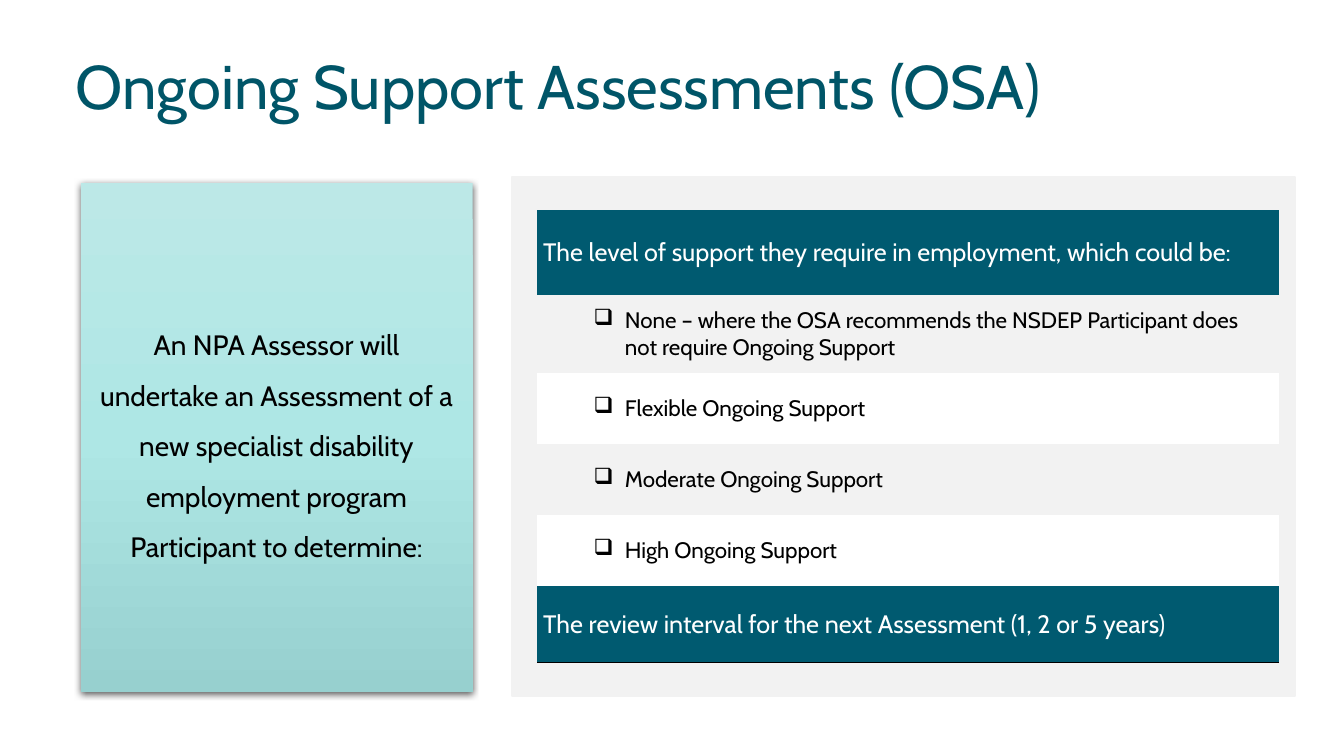
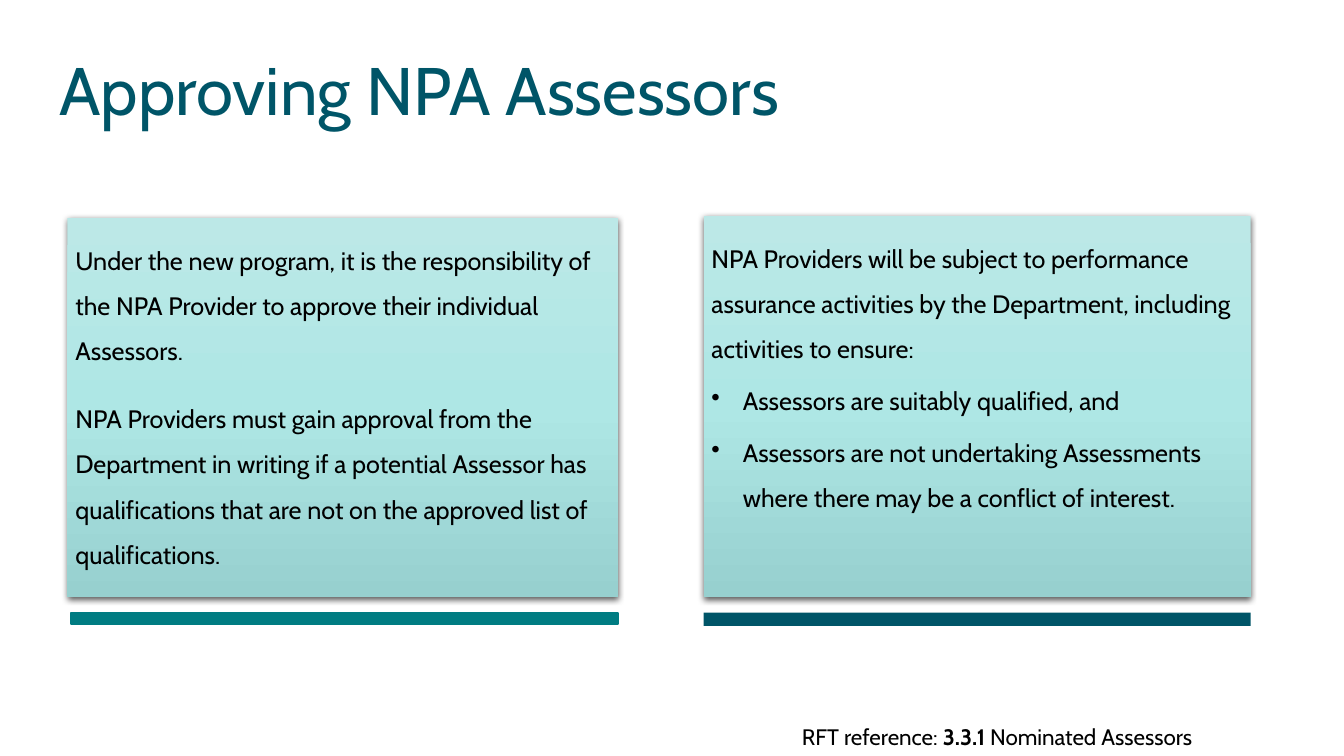
from copy import deepcopy

from lxml.etree import SubElement
from pptx import Presentation
from pptx.dml.color import RGBColor
from pptx.enum.shapes import MSO_SHAPE
from pptx.enum.text import MSO_ANCHOR, PP_ALIGN
from pptx.oxml.ns import qn
from pptx.util import Cm, Pt

FONT = "Cabin"
BLACK, WHITE, GREY = "000000", "FFFFFF", "F2F2F2"
TITLE_BLUE, ROW_BLUE, TEAL = "005568", "005A70", "007C82"
CARD_GRADIENT = [(0, "BCE8E7"), (0.5, "AEE7E5"), (1, "97D0CF")]
NO_TABLE_STYLE = "{2D5ABB26-0587-4C30-8999-92F81FD0307C}"
BULLET_INDENT = 0.79


def rgb(color):
    return RGBColor.from_string(color)


def write(frame, text, size=18, color=BLACK, align=PP_ALIGN.LEFT,
          spacing=None, before=None, bullet=None, indent=BULLET_INDENT):
    """Add a paragraph; text is a string or a list of (words, bold) pairs."""
    unused = not frame.paragraphs[0].runs
    paragraph = frame.paragraphs[0] if unused else frame.add_paragraph()
    paragraph.alignment = align
    if spacing:
        paragraph.line_spacing = spacing
    if before:
        paragraph.space_before = Pt(before)
    if bullet:
        properties = paragraph._p.get_or_add_pPr()
        properties.set("marL", str(Cm(indent)))
        properties.set("indent", str(-Cm(BULLET_INDENT)))
        SubElement(properties, qn("a:buChar"), char=bullet)
    for words, bold in [(text, False)] if isinstance(text, str) else text:
        run = paragraph.add_run()
        run.text = words
        run.font.name = FONT
        run.font.size = Pt(size)
        run.font.bold = bold
        run.font.color.rgb = rgb(color)


def set_margins(holder, left, top, right, bottom):
    holder.margin_left, holder.margin_top = Cm(left), Cm(top)
    holder.margin_right, holder.margin_bottom = Cm(right), Cm(bottom)


def add_text_area(slide, left, top, width, height):
    frame = slide.shapes.add_textbox(Cm(left), Cm(top), Cm(width), Cm(height)).text_frame
    frame.word_wrap = True
    return frame


def add_title(slide, text, left, size):
    frame = add_text_area(slide, left, 1.22, 30, 1.9)
    set_margins(frame, 0, 0, 0, 0)
    write(frame, text, size=size, color=TITLE_BLUE)


def add_block(slide, left, top, width, height, color, outlined=False):
    block = slide.shapes.add_shape(
        MSO_SHAPE.RECTANGLE, Cm(left), Cm(top), Cm(width), Cm(height))
    block.shadow.inherit = False
    block.fill.solid()
    block.fill.fore_color.rgb = rgb(color)
    if outlined:
        block.line.color.rgb = rgb(color)
        block.line.width = Pt(1.5)
    else:
        block.line.fill.background()
    return block


def add_card(slide, left, top, width, height, margins, anchor=MSO_ANCHOR.TOP):
    """Add a shaded, shadowed card and return its text frame."""
    card = add_block(slide, left, top, width, height, WHITE)
    card.fill.gradient()
    card.fill.gradient_angle = 270
    properties = card._element.spPr
    stops = properties.find(".//" + qn("a:gsLst"))
    stops.insert(1, deepcopy(stops[0]))
    for stop, (position, color) in zip(card.fill.gradient_stops, CARD_GRADIENT):
        stop.position = position
        stop.color.rgb = rgb(color)
    shadow = SubElement(properties.find(qn("a:effectLst")), qn("a:outerShdw"),
                        blurRad=str(Pt(4.5)), dist=str(Pt(1.5)),
                        dir="5400000", rotWithShape="0")
    shade = SubElement(shadow, qn("a:srgbClr"), val=BLACK)
    SubElement(shade, qn("a:alpha"), val="63000")
    frame = card.text_frame
    frame.word_wrap = True
    frame.vertical_anchor = anchor
    set_margins(frame, *margins)
    return frame


def add_bottom_border(cell):
    border = SubElement(cell._tc.get_or_add_tcPr(), qn("a:lnB"), w=str(Pt(1)))
    fill = SubElement(border, qn("a:solidFill"))
    SubElement(fill, qn("a:srgbClr"), val=BLACK)


def add_list_table(slide, left, top, width, rows, underlined=False):
    """Add a one-column table from (height, fill, text, format) rows; return its bottom."""
    total = sum(height for height, *_ in rows)
    table = slide.shapes.add_table(
        len(rows), 1, Cm(left), Cm(top), Cm(width), Cm(total)).table
    table.first_row = table.horz_banding = False
    table._tbl.tblPr.find(qn("a:tableStyleId")).text = NO_TABLE_STYLE
    for index, (height, fill, text, text_format) in enumerate(rows):
        table.rows[index].height = Cm(height)
        cell = table.cell(index, 0)
        if underlined:
            add_bottom_border(cell)
        cell.fill.solid()
        cell.fill.fore_color.rgb = rgb(fill)
        cell.vertical_anchor = MSO_ANCHOR.MIDDLE
        set_margins(cell, 0.15, 0.15, 0.15, 0.15)
        write(cell.text_frame, text, **text_format)
    return top + total


def build_support_slide(slide):
    add_title(slide, "Ongoing Support Assessments (OSA)", 1.9, 44)
    add_block(slide, 12.9, 4.47, 19.74, 13.08, GREY, outlined=True)
    intro = add_card(slide, 2.03, 4.6, 9.88, 12.83,
                     (0.41, 0.13, 0.41, 0.13), MSO_ANCHOR.MIDDLE)
    write(intro, "An NPA Assessor will undertake an Assessment of a new specialist "
          "disability employment program Participant to determine:",
          size=20, align=PP_ALIGN.CENTER, spacing=1.5)

    heading = {"color": WHITE}
    option = {"size": 16, "bullet": "❑", "indent": 2.06}
    levels = [
        (2.16, ROW_BLUE, "The level of support they require in employment, which could be:", heading),
        (1.96, GREY, "None – where the OSA recommends the NSDEP Participant does "
                     "not require Ongoing Support", option),
        (1.79, WHITE, "Flexible Ongoing Support", option),
        (1.79, GREY, "Moderate Ongoing Support", option),
        (1.79, WHITE, "High Ongoing Support", option),
    ]
    review = [(1.93, ROW_BLUE, "The review interval for the next Assessment (1, 2 or 5 years)", heading)]
    left, width = 13.54, 18.69
    levels_bottom = add_list_table(slide, left, 5.28, width, levels)
    add_list_table(slide, left, levels_bottom, width, review, underlined=True)


def build_approval_slide(slide):
    add_title(slide, "Approving NPA Assessors", 1.5, 48)
    margins = (0.2, 0.3, 0.2, 0.41)
    approval = add_card(slide, 1.7, 5.49, 13.87, 9.55, margins)
    write(approval, "Under the new program, it is the responsibility of the NPA Provider "
          "to approve their individual Assessors.", spacing=1.5)
    write(approval, "NPA Providers must gain approval from the Department in writing if a "
          "potential Assessor has qualifications that are not on the approved list of "
          "qualifications.", spacing=1.5, before=16)
    add_block(slide, 1.78, 15.44, 13.79, 0.28, TEAL, outlined=True)

    assurance = add_card(slide, 17.73, 5.44, 13.79, 9.6, margins)
    write(assurance, "NPA Providers will be subject to performance assurance activities by "
          "the Department, including activities to ensure:", spacing=1.5)
    for check in ("Assessors are suitably qualified, and",
                  "Assessors are not undertaking Assessments where there may be a "
                  "conflict of interest."):
        write(assurance, check, spacing=1.5, before=4.5, bullet="•")
    add_block(slide, 17.73, 15.44, 13.79, 0.33, TITLE_BLUE)

    reference = add_text_area(slide, 19.96, 18.11, 11.58, 0.94)
    write(reference, [("RFT reference: ", False), ("3.3.1 ", True),
                      ("Nominated Assessors", False)], size=16)


def main():
    deck = Presentation()
    deck.slide_width, deck.slide_height = Cm(33.87), Cm(19.05)
    for build in (build_support_slide, build_approval_slide):
        build(deck.slides.add_slide(deck.slide_layouts[6]))
    deck.save("out.pptx")


if __name__ == "__main__":
    main()
